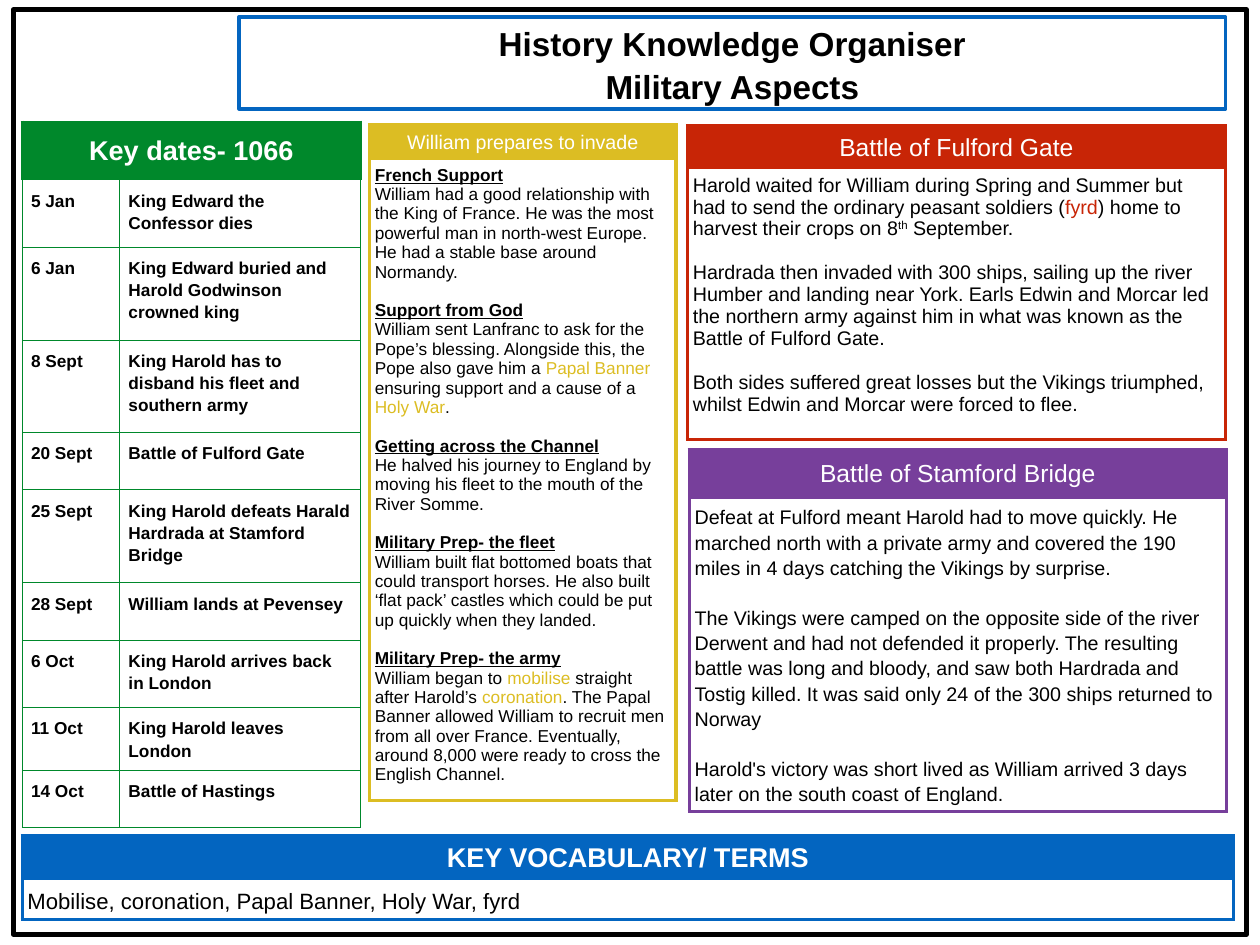
from lxml import etree
from pptx import Presentation
from pptx.dml.color import RGBColor
from pptx.enum.shapes import MSO_SHAPE
from pptx.enum.text import MSO_ANCHOR, MSO_AUTO_SIZE, PP_ALIGN
from pptx.oxml import parse_xml
from pptx.util import Inches, Pt

CENTER, LEFT = PP_ALIGN.CENTER, PP_ALIGN.LEFT
MIDDLE, TOP = MSO_ANCHOR.MIDDLE, MSO_ANCHOR.TOP
FONT = "Arial"
BLACK, WHITE, BLUE = "000000", "FFFFFF", "0365C0"
GREEN, YELLOW, PURPLE, RED = "00882B", "DCBD23", "773F9B", "C82506"
LINE_HEIGHT = 1.12  # height of one line of text relative to its size
NO_STYLE = "{2D5ABB26-0587-4C30-8999-92F81FD0307C}"
DRAWING = "http://schemas.openxmlformats.org/drawingml/2006/main"


def rgb(value):
    return RGBColor.from_string(value)


def write_cell(cell, paragraphs, size, color, bold, spacing, margin, accent, fill, borders):
    """Lines starting with # are headings; *...* marks a key term or an ordinal."""
    cell.fill.solid()
    cell.fill.fore_color.rgb = rgb(fill)
    cell.margin_left = cell.margin_right = Inches(margin)
    cell.margin_top = cell.margin_bottom = Inches(margin)
    for index, (side, width) in enumerate(borders):
        cell._tc.get_or_add_tcPr().insert(index, parse_xml(
            f'<a:ln{side} xmlns:a="{DRAWING}" w="{Pt(width)}"><a:solidFill>'
            f'<a:srgbClr val="{accent}"/></a:solidFill></a:ln{side}>'))
    frame = cell.text_frame
    frame.word_wrap = True
    for index, text in enumerate(paragraphs):
        paragraph = frame.paragraphs[0] if index == 0 else frame.add_paragraph()
        paragraph.line_spacing = spacing
        if index and not paragraphs[index - 1].startswith("#"):
            paragraph.space_before = Pt(size * LINE_HEIGHT * spacing)
        heading = text.startswith("#")
        for part, piece in enumerate(text.lstrip("#").split("*")):
            run = paragraph.add_run()
            run.text = piece
            run.font.name, run.font.size = FONT, Pt(size)
            run.font.bold = bold or heading
            run.font.underline = heading
            ordinal = piece == "th"
            run.font.color.rgb = rgb(accent if part % 2 and not ordinal else color)
            if ordinal:
                run.font._element.set("baseline", "30000")


prs = Presentation()
prs.slide_width, prs.slide_height = Inches(14.22), Inches(10.67)
slide = prs.slides.add_slide(prs.slide_layouts[5])

# Page frame
page_frame = slide.shapes.add_shape(
    MSO_SHAPE.RECTANGLE, Inches(0.15), Inches(0.11), Inches(13.92), Inches(10.44))
page_frame.shadow.inherit = False
page_frame.fill.background()
page_frame.line.color.rgb = rgb(BLACK)
page_frame.line.width = Pt(4)

# Title
title = slide.shapes.title
title.left, title.top = Inches(2.7), Inches(0.19)
title.width, title.height = Inches(11.13), Inches(1.04)
title.line.color.rgb = rgb(BLUE)
title.line.width = Pt(3)
heading_frame = title.text_frame
heading_frame.auto_size = MSO_AUTO_SIZE.NONE
heading_frame.vertical_anchor = MIDDLE
heading_frame.margin_left = heading_frame.margin_right = Inches(0.06)
heading_frame.margin_top = heading_frame.margin_bottom = Inches(0.06)
heading_frame.text = "History Knowledge Organiser\nMilitary Aspects"
for paragraph in heading_frame.paragraphs:
    paragraph.alignment = CENTER
    paragraph.line_spacing = 1.08
    font = paragraph.runs[0].font
    font.name, font.size, font.bold = FONT, Pt(27), True
    font.color.rgb = rgb(BLACK)

# Contents of the panels
vocabulary = ["Mobilise, coronation, Papal Banner, Holy War, fyrd"]
stamford_bridge = [
    "Defeat at Fulford meant Harold had to move quickly. He marched north with a private "
    "army and covered the 190 miles in 4 days catching the Vikings by surprise.",
    "The Vikings were camped on the opposite side of the river Derwent and had not defended "
    "it properly. The resulting battle was long and bloody, and saw both Hardrada and Tostig "
    "killed. It was said only 24 of the 300 ships returned to Norway",
    "Harold's victory was short lived as William arrived 3 days later on the south coast of "
    "England.",
]
william_prepares = [
    "#French Support",
    "William had a good relationship with the King of France. He was the most powerful man "
    "in north-west Europe. He had a stable base around Normandy.",
    "#Support from God",
    "William sent Lanfranc to ask for the Pope’s blessing. Alongside this, the Pope also "
    "gave him a *Papal Banner *ensuring support and a cause of a *Holy War*.",
    "#Getting across the Channel",
    "He halved his journey to England by moving his fleet to the mouth of the River Somme.",
    "#Military Prep- the fleet",
    "William built flat bottomed boats that could transport horses. He also built ‘flat "
    "pack’ castles which could be put up quickly when they landed.",
    "#Military Prep- the army",
    "William began to *mobilise* straight after Harold’s *coronation*. The Papal Banner "
    "allowed William to recruit men from all over France. Eventually, around 8,000 were "
    "ready to cross the English Channel.",
]
fulford_gate = [
    "Harold waited for William during Spring and Summer but had to send the ordinary peasant "
    "soldiers (*fyrd*) home to harvest their crops on 8*th* September.",
    "Hardrada then invaded with 300 ships, sailing up the river Humber and landing near York. "
    "Earls Edwin and Morcar led the northern army against him in what was known as the "
    "Battle of Fulford Gate.",
    "Both sides suffered great losses but the Vikings triumphed, whilst Edwin and Morcar "
    "were forced to flee.",
]
key_dates = [
    ("5 Jan", "King Edward the Confessor dies"),
    ("6 Jan", "King Edward buried and Harold Godwinson crowned king"),
    ("8 Sept", "King Harold has to disband his fleet and southern army"),
    ("20 Sept", "Battle of Fulford Gate"),
    ("25 Sept", "King Harold defeats Harald Hardrada at Stamford Bridge"),
    ("28 Sept", "William lands at Pevensey"),
    ("6 Oct", "King Harold arrives back in London"),
    ("11 Oct", "King Harold leaves London"),
    ("14 Oct", "Battle of Hastings"),
]
date_rows = [[[date], [event]] for date, event in key_dates]
date_heights = [0.65, 0.76, 1.05, 1.04, 0.65, 1.05, 0.65, 0.76, 0.71, 0.64]

# Accent, left, top, column widths, row heights, heading, its size and weight,
# body rows, body size, line spacing
panels = [
    (BLUE, 0.25, 9.44, [13.67], [0.5, 0.43], "KEY VOCABULARY/ TERMS", 22, True,
     [[vocabulary]], 18, 1.15),
    (PURPLE, 7.78, 5.08, [6.06], [0.55, 3.52], "Battle of Stamford Bridge", 20, False,
     [[stamford_bridge]], 16, 1.15),
    (YELLOW, 4.17, 1.41, [3.46], [0.4, 7.23], "William prepares to invade", 16, False,
     [[william_prepares]], 14, 1),
    (RED, 7.76, 1.42, [6.07], [0.49, 3.05], "Battle of Fulford Gate", 20, False,
     [[fulford_gate]], 16, 1),
    (GREEN, 0.25, 1.38, [1.1, 2.72], date_heights, "Key dates- 1066", 22, True,
     date_rows, 14, 1.15),
]

# Panels: a coloured heading row above the body rows
for (accent, left, top, widths, heights, heading, heading_size, heading_bold,
     rows, size, spacing) in panels:
    panel = slide.shapes.add_table(
        len(heights), len(widths), Inches(left), Inches(top),
        Inches(sum(widths)), Inches(sum(heights))).table
    panel.first_row = panel.horz_banding = False
    panel._tbl.tblPr.find(etree.QName(DRAWING, "tableStyleId").text).text = NO_STYLE
    for column, width in zip(panel.columns, widths):
        column.width = Inches(width)
    for row, height in zip(panel.rows, heights):
        row.height = Inches(height)

    is_dates = rows is date_rows
    heading_borders = [("L", 3), ("R", 3), ("T", 3)]
    if is_dates:
        panel.cell(0, 0).merge(panel.cell(0, 1))
    for index in range(len(widths)):
        write_cell(panel.cell(0, index), [heading] if index == 0 else [], heading_size,
                   WHITE, heading_bold, 1, 0.06, accent, accent, heading_borders)
    panel.cell(0, 0).vertical_anchor = MIDDLE
    panel.cell(0, 0).text_frame.paragraphs[0].alignment = CENTER

    body_borders = [(side, 0.75) for side in "LRTB"] if is_dates else [
        (side, 3) for side in "LRB"]
    for row_index, row in enumerate(rows, start=1):
        for column_index, paragraphs in enumerate(row):
            body = panel.cell(row_index, column_index)
            write_cell(body, paragraphs, size, BLACK, is_dates, spacing,
                       0.1 if is_dates else 0.06, accent, WHITE, body_borders)
            body.vertical_anchor = MIDDLE if paragraphs is vocabulary else TOP
            body.text_frame.paragraphs[0].alignment = LEFT

prs.save("out.pptx")
